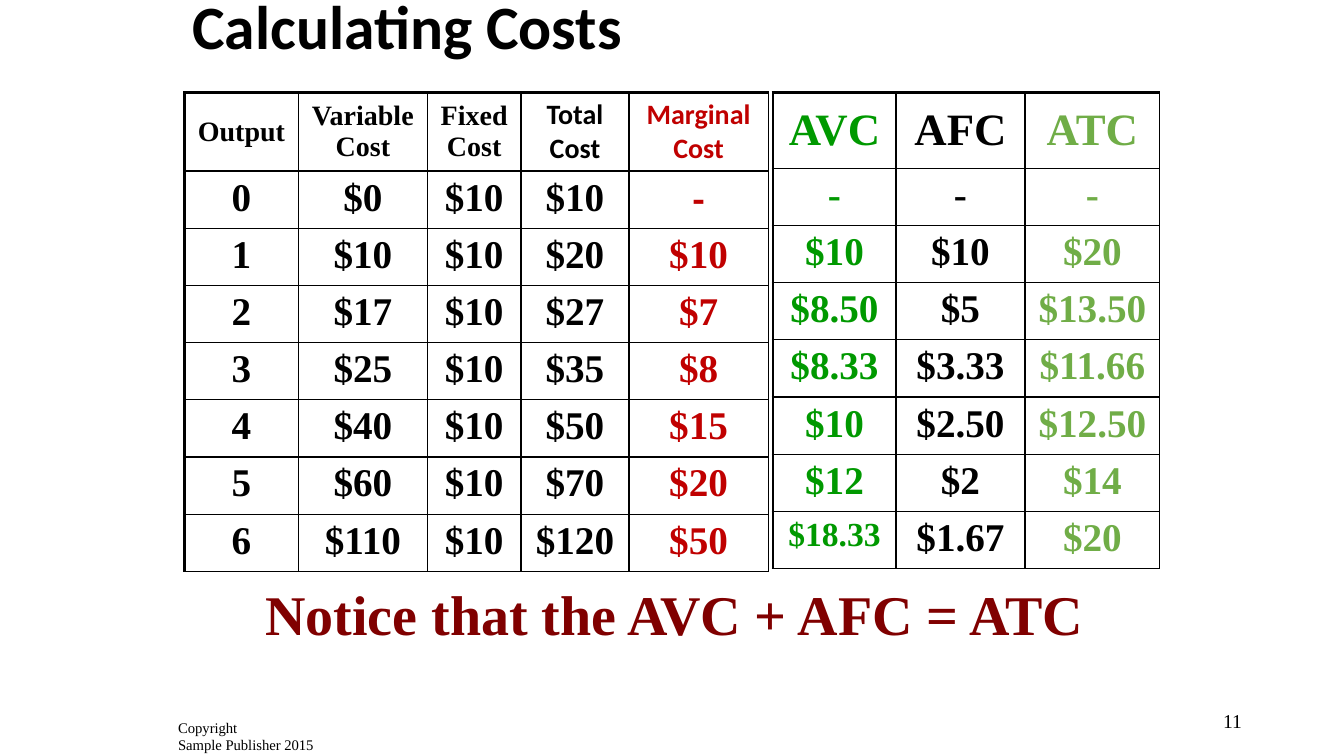
from lxml.etree import SubElement
from pptx import Presentation
from pptx.dml.color import RGBColor
from pptx.enum.text import MSO_ANCHOR, PP_ALIGN
from pptx.oxml.ns import qn
from pptx.util import Cm, Pt

BLACK = RGBColor(0x00, 0x00, 0x00)
RED = RGBColor(0xC0, 0x00, 0x00)
MAROON = RGBColor(0x80, 0x00, 0x00)
GREEN = RGBColor(0x00, 0x99, 0x00)
LIME = RGBColor(0x70, 0xAD, 0x47)
SERIF, SANS = "Times New Roman", "Calibri"
LEFT, MID, RIGHT = PP_ALIGN.LEFT, PP_ALIGN.CENTER, PP_ALIGN.RIGHT
TOP, CENTER = MSO_ANCHOR.TOP, MSO_ANCHOR.MIDDLE
PLAIN = "{2D5ABB26-0587-4C30-8999-92F81FD0307C}"

COSTS = [
    ["Output", "Variable\nCost", "Fixed\nCost", "Total\nCost", "Marginal\nCost"],
    ["0", "$0", "$10", "$10", "-"],
    ["1", "$10", "$10", "$20", "$10"],
    ["2", "$17", "$10", "$27", "$7"],
    ["3", "$25", "$10", "$35", "$8"],
    ["4", "$40", "$10", "$50", "$15"],
    ["5", "$60", "$10", "$70", "$20"],
    ["6", "$110", "$10", "$120", "$50"],
]
UNITS = [
    ["AVC", "AFC", "ATC"],
    ["-", "-", "-"],
    ["$10", "$10", "$20"],
    ["$8.50", "$5", "$13.50"],
    ["$8.33", "$3.33", "$11.66"],
    ["$10", "$2.50", "$12.50"],
    ["$12", "$2", "$14"],
    ["$18.33", "$1.67", "$20"],
]
GRIDS = [
    dict(rows=COSTS, left=4.65, wide=[2.87, 3.25, 2.36, 2.72, 3.51], head=1.97,
         size=20, hues=[BLACK] * 4 + [RED], sans={(0, 3), (0, 4), (1, 4)}, small={}),
    dict(rows=UNITS, left=19.48, wide=[3.1, 3.25, 3.4], head=1.9,
         size=32, hues=[GREEN, BLACK, LIME], sans=set(), small={(7, 0): 24}),
]
GRID_TOP, ROW = 2.34, 1.44
LABELS = [
    ("Calculating Costs", (4.6, -0.84, 24.38, 3.18),
     dict(size=44, font=SANS, bold=True, anchor=CENTER, space=0.9)),
    ("11", (23.93, 17.65, 7.62, 1.02),
     dict(size=14, align=RIGHT, anchor=CENTER)),
    ("Copyright\nSample Publisher 2015", (4.24, 17.98, 4.24, 1.27),
     dict(size=10.5)),
    ("Notice that the AVC + AFC = ATC", (4.72, 14.66, 24.56, 1.8),
     dict(size=40, hue=MAROON, bold=True, align=MID, space=0.9)),
]


def write(box, text, size=28, font=SERIF, hue=BLACK, bold=False,
          align=LEFT, anchor=TOP, space=None):
    box.vertical_anchor = anchor
    frame = getattr(box, "text_frame", box)
    frame.word_wrap = True
    frame.text = text
    for para in frame.paragraphs:
        para.alignment = align
        if space:
            para.line_spacing = space
        face = para.runs[0].font
        face.name, face.size, face.bold = font, Pt(size), bold
        face.color.rgb = hue


def edge(cell, row, col):
    props = cell._tc.get_or_add_tcPr()
    thick = {"L": col == 0, "R": False, "T": row == 0, "B": False}
    for side, heavy in thick.items():
        line = SubElement(props, qn("a:ln" + side), w=str(Pt(2.25 if heavy else 1)))
        fill = SubElement(line, qn("a:solidFill"))
        SubElement(fill, qn("a:srgbClr"), val=str(BLACK))
    cell.fill.background()


def draw(slide, rows, left, wide, head, size, hues, sans, small):
    high = [head] + [ROW] * (len(rows) - 1)
    frame = slide.shapes.add_table(len(rows), len(wide), Cm(left), Cm(GRID_TOP),
                                   Cm(sum(wide)), Cm(sum(high)))
    grid = frame.table
    grid.first_row = grid.horz_banding = False
    grid._tbl.tblPr.find(qn("a:tableStyleId")).text = PLAIN
    for part, width in zip(grid.columns, wide):
        part.width = Cm(width)
    for part, height in zip(grid.rows, high):
        part.height = Cm(height)
    for row, texts in enumerate(rows):
        for col, text in enumerate(texts):
            spot = (row, col)
            cell = grid.cell(row, col)
            edge(cell, row, col)
            write(cell, text, size=small.get(spot, 28 if row else size),
                  font=SANS if spot in sans else SERIF, hue=hues[col], bold=True,
                  align=MID, anchor=TOP if row else CENTER)


def main():
    deck = Presentation()
    deck.slide_width, deck.slide_height = Cm(33.87), Cm(19.05)
    slide = deck.slides.add_slide(deck.slide_layouts[6])
    for text, place, style in LABELS:
        box = slide.shapes.add_textbox(*map(Cm, place))
        write(box.text_frame, text, **style)
    for grid in GRIDS:
        draw(slide, **grid)
    deck.save("out.pptx")


if __name__ == "__main__":
    main()
